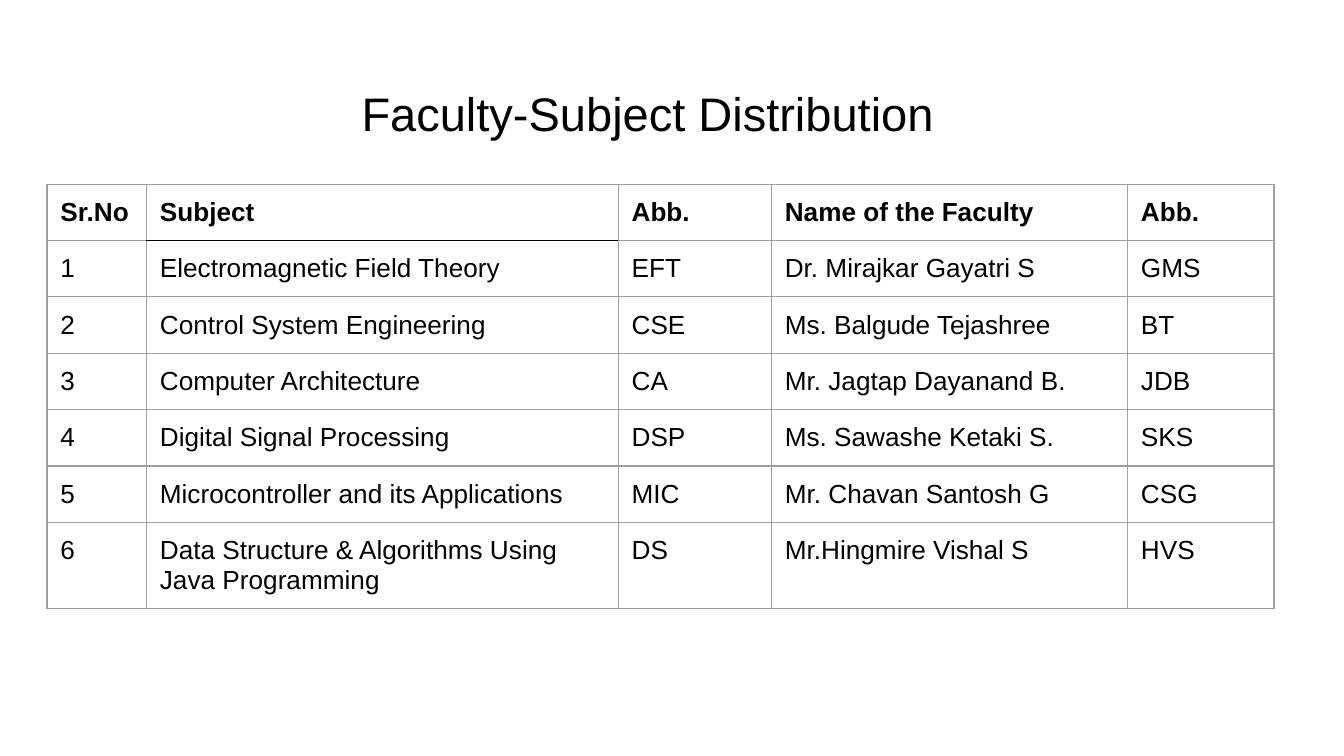
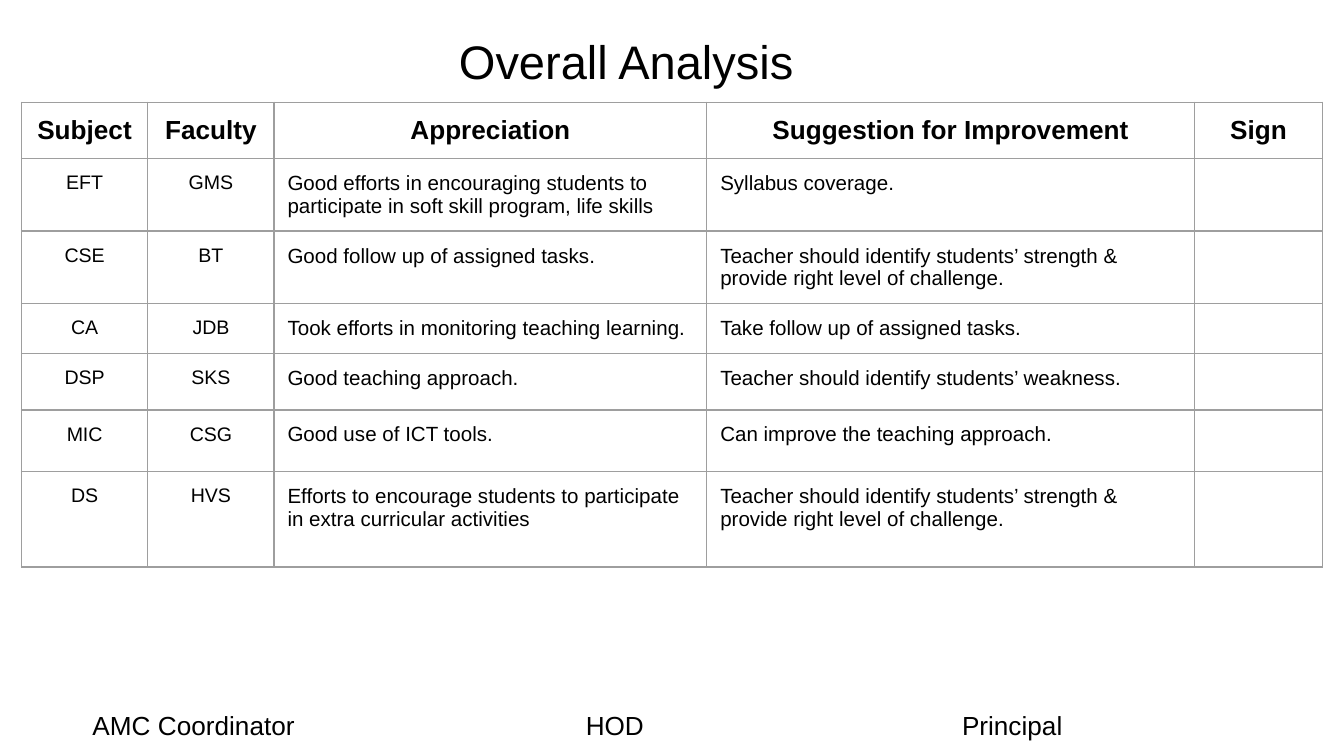
from dataclasses import dataclass
from lxml.etree import SubElement
from pptx import Presentation
from pptx.dml.color import RGBColor
from pptx.enum.text import MSO_ANCHOR as Anchor, MSO_AUTO_SIZE as AutoSize, PP_ALIGN as Align
from pptx.oxml.ns import qn
from pptx.util import Inches, Pt


@dataclass(frozen=True)
class Theme:
    """Colours, font and type sizes shared by the slides."""
    font: str = "Arial"
    ink: str = "000000"
    rule: str = "9E9E9E"
    rule_width: float = 0.75
    pad: float = 0.1
    title: float = 25.2
    head: float = 14
    note: float = 11
    code: float = 10.5


THEME = Theme()
WIDTH = 10
HEIGHT = WIDTH * 9 / 16
TITLE_WIDTH, TITLE_HEIGHT = 9.32, 0.63
SIDES = "LRTB"

FACULTY = [
    ("Sr.No", "Subject", "Abb.", "Name of the Faculty", "Abb."),
    ("1", "Electromagnetic Field Theory", "EFT", "Dr. Mirajkar Gayatri S", "GMS"),
    ("2", "Control System Engineering", "CSE", "Ms. Balgude Tejashree", "BT"),
    ("3", "Computer Architecture", "CA", "Mr. Jagtap Dayanand B.", "JDB"),
    ("4", "Digital Signal Processing", "DSP", "Ms. Sawashe Ketaki S.", "SKS"),
    ("5", "Microcontroller and its Applications", "MIC", "Mr. Chavan Santosh G", "CSG"),
    ("6", "Data Structure & Algorithms Using Java Programming", "DS",
     "Mr.Hingmire Vishal S", "HVS"),
]
CHALLENGE = "Teacher should identify students’ strength & provide right level of challenge."
ANALYSIS = [
    ("Subject", "Faculty", "Appreciation", "Suggestion for Improvement", "Sign"),
    ("EFT", "GMS", "Good efforts in encouraging students to participate in soft skill "
     "program, life skills", "Syllabus coverage.", ""),
    ("CSE", "BT", "Good follow up of assigned tasks.", CHALLENGE, ""),
    ("CA", "JDB", "Took efforts in monitoring teaching learning.",
     "Take follow up of assigned tasks.", ""),
    ("DSP", "SKS", "Good teaching approach.",
     "Teacher should identify students’ weakness.", ""),
    ("MIC", "CSG", "Good use of ICT tools.", "Can improve the teaching approach.", ""),
    ("DS", "HVS", "Efforts to encourage students to participate in extra curricular "
     "activities", CHALLENGE, ""),
]
SIGNATORIES = [("AMC Coordinator", 0.59, 3.07), ("HOD", 4.26, 1.59), ("Principal", 7.06, 2.6)]


def write(frame, text, size, bold=False, align=Align.LEFT):
    """Write one formatted paragraph into a text frame."""
    para = frame.paragraphs[0]
    para.alignment = align
    if not text:
        mark = SubElement(para._p, qn("a:endParaRPr"), sz=str(int(size * 100)))
        SubElement(mark, qn("a:latin"), typeface=THEME.font)
        return
    span = para.add_run()
    span.text = text
    span.font.name, span.font.size, span.font.bold = THEME.font, Pt(size), bold
    span.font.color.rgb = RGBColor.from_string(THEME.ink)


def pad(box):
    """Give a frame or cell the shared inner margin."""
    box.margin_left = box.margin_right = box.margin_top = box.margin_bottom = Inches(THEME.pad)


def add_page(deck, title, left, top):
    """Add a slide with its title placed and styled."""
    page = deck.slides.add_slide(deck.slide_layouts[5])
    box = page.shapes.title
    box.left, box.top = Inches(left), Inches(top)
    box.width, box.height = Inches(TITLE_WIDTH), Inches(TITLE_HEIGHT)
    frame = box.text_frame
    pad(frame)
    frame.auto_size, frame.vertical_anchor = AutoSize.NONE, Anchor.BOTTOM
    write(frame, title, THEME.title, align=Align.CENTER)
    return page


def draw_borders(cell, dark_side):
    """Rule the four sides of a cell, with one side optionally dark."""
    for side in SIDES:
        line = SubElement(cell._tc.get_or_add_tcPr(), qn(f"a:ln{side}"),
                          w=str(Pt(THEME.rule_width)))
        fill = SubElement(line, qn("a:solidFill"))
        SubElement(fill, qn("a:srgbClr"), val=THEME.ink if side == dark_side else THEME.rule)


def add_grid(page, rows, left, top, widths, heights, style, dark=None):
    """Add a ruled table whose cells take size and alignment from style(row, column)."""
    table = page.shapes.add_table(len(rows), len(widths), Inches(left), Inches(top),
                                  Inches(sum(widths)), Inches(sum(heights))).table
    table.first_row = table.horz_banding = False
    for column, width in zip(table.columns, widths):
        column.width = Inches(width)
    for r, (values, height) in enumerate(zip(rows, heights)):
        table.rows[r].height = Inches(height)
        for c, text in enumerate(values):
            cell = table.cell(r, c)
            pad(cell)
            draw_borders(cell, (dark or {}).get((r, c)))
            cell.fill.background()
            size, align = style(r, c)
            write(cell.text_frame, text, size, bold=r == 0, align=align)


def analysis_style(row, column):
    """Centre headings and codes, and set remarks flush left."""
    if row == 0:
        return THEME.head, Align.CENTER
    return (THEME.code, Align.CENTER) if column < 2 else (THEME.note, Align.LEFT)


def main():
    """Build and save the two slides."""
    deck = Presentation()
    deck.slide_width, deck.slide_height = Inches(WIDTH), Inches(HEIGHT)

    page = add_page(deck, "Faculty-Subject Distribution", 0.16, 0.52)
    add_grid(page, FACULTY, 0.35, 1.37, [0.74, 3.51, 1.14, 2.65, 1.09], [0.38] + [0.42] * 6,
             lambda row, column: (THEME.head, Align.LEFT), dark={(0, 1): "B", (1, 1): "T"})

    page = add_page(deck, "Overall Analysis", 0, 0.13)
    add_grid(page, ANALYSIS, 0.16, 0.76, [0.94, 0.94, 3.22, 3.63, 0.95],
             [0.39, 0.36, 0.49, 0.33, 0.42, 0.46, 0.71], analysis_style)
    for name, left, width in SIGNATORIES:
        box = page.shapes.add_textbox(Inches(left), Inches(5.23), Inches(width), Inches(0.34))
        box.text_frame.word_wrap = True
        box.text_frame.auto_size = AutoSize.SHAPE_TO_FIT_TEXT
        write(box.text_frame, name, THEME.head)
    deck.save("out.pptx")


if __name__ == "__main__":
    main()
